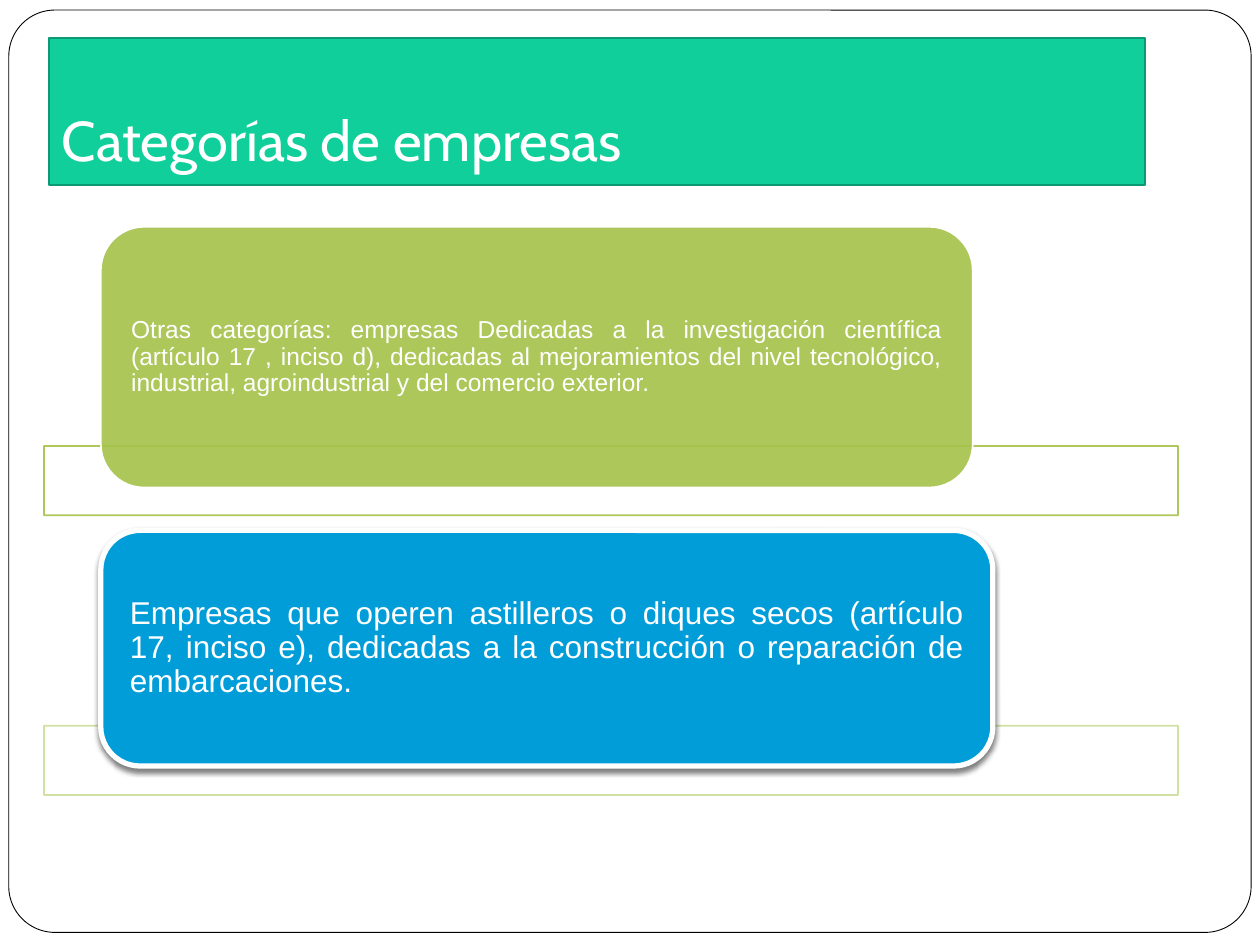
from lxml.etree import SubElement
from pptx import Presentation
from pptx.dml.color import RGBColor
from pptx.enum.shapes import MSO_SHAPE
from pptx.enum.text import MSO_ANCHOR, PP_ALIGN
from pptx.oxml.ns import qn
from pptx.util import Inches, Pt

WHITE = RGBColor(0xFF, 0xFF, 0xFF)
BLACK = RGBColor(0x00, 0x00, 0x00)
TEAL = RGBColor(0x10, 0xCF, 0x9B)
DARK_TEAL = RGBColor(0x0C, 0x99, 0x73)
GREEN = RGBColor(0xA5, 0xC2, 0x49)
BLUE = RGBColor(0x00, 0x9D, 0xD9)

RESEARCH = (
    "Otras categorías: empresas Dedicadas a la investigación científica "
    "(artículo 17 , inciso d), dedicadas al mejoramientos del nivel tecnológico, "
    "industrial, agroindustrial y del comercio exterior."
)
SHIPYARDS = (
    "Empresas que operen astilleros o diques secos (artículo 17, inciso e), "
    "dedicadas a la construcción o reparación de embarcaciones."
)


def set_alpha(color_format, percent):
    """Give a solid colour the stated opacity."""
    color = color_format._xFill.find(qn("a:srgbClr"))
    SubElement(color, qn("a:alpha"), val=str(percent * 1000))


def add_panel(slide, kind, box, fill, line, width, fill_alpha=100, line_alpha=100):
    """Add a filled and outlined preset shape."""
    panel = slide.shapes.add_shape(kind, *map(Inches, box))
    panel.shadow.inherit = False
    panel.fill.solid()
    panel.fill.fore_color.rgb = fill
    panel.line.color.rgb = line
    panel.line.width = Pt(width)
    if fill_alpha < 100:
        set_alpha(panel.fill.fore_color, fill_alpha)
    if line_alpha < 100:
        set_alpha(panel.line.color, line_alpha)
    return panel


def write_text(panel, text, size, font="Arial", align=PP_ALIGN.JUSTIFY,
               anchor=MSO_ANCHOR.MIDDLE, insets=(0.14, 0, 0.14, 0), spacing=0.9):
    """Write one formatted white paragraph inside a panel."""
    frame = panel.text_frame
    frame.word_wrap = True
    frame.vertical_anchor = anchor
    (frame.margin_left, frame.margin_top,
     frame.margin_right, frame.margin_bottom) = map(Inches, insets)
    paragraph = frame.paragraphs[0]
    paragraph.alignment = align
    paragraph.line_spacing = spacing
    run = paragraph.add_run()
    run.text = text
    run.font.name = font
    run.font.size = Pt(size)
    run.font.color.rgb = WHITE


def add_drop_shadow(panel):
    """Cast a soft black shadow straight down from a panel."""
    effects = panel._element.spPr.find(qn("a:effectLst"))
    shadow = SubElement(effects, qn("a:outerShdw"), blurRad=str(Pt(3)),
                        dist=str(Pt(2)), dir="5400000", rotWithShape="0")
    color = SubElement(shadow, qn("a:srgbClr"), val="000000")
    SubElement(color, qn("a:alpha"), val="50000")


def add_category(slide, text, size, bar_top, bar_alpha, box, fill, outline, fill_alpha=100):
    """Add a category card over its outlined bar."""
    add_panel(slide, MSO_SHAPE.RECTANGLE, (0.35, bar_top, 9, 0.55), WHITE, GREEN, 1,
              fill_alpha=90, line_alpha=bar_alpha)
    card = add_panel(slide, MSO_SHAPE.ROUNDED_RECTANGLE, box, fill, WHITE, outline,
                     fill_alpha=fill_alpha)
    write_text(card, text, size)
    return card


def main():
    """Build the slide and save it."""
    presentation = Presentation()
    presentation.slide_width, presentation.slide_height = Inches(10), Inches(7.5)
    slide = presentation.slides.add_slide(presentation.slide_layouts[6])

    border = add_panel(slide, MSO_SHAPE.ROUNDED_RECTANGLE, (0.07, 0.08, 9.86, 7.32),
                       WHITE, BLACK, 0.5)
    border.adjustments[0] = 0.05
    title = add_panel(slide, MSO_SHAPE.RECTANGLE, (0.39, 0.3, 8.7, 1.17), TEAL, DARK_TEAL, 1)
    write_text(title, "Categorías de empresas", 32, font="Cabin", align=PP_ALIGN.LEFT,
               anchor=MSO_ANCHOR.BOTTOM, insets=(0.1, 0.05, 0.1, 0.1), spacing=1.0)

    add_category(slide, RESEARCH, 14, 3.54, 90, (0.8, 1.8, 6.92, 2.07), GREEN, 1,
                 fill_alpha=90)
    shipyards = add_category(slide, SHIPYARDS, 18, 5.76, 50, (0.8, 4.21, 7.08, 1.87), BLUE, 3)
    add_drop_shadow(shipyards)

    presentation.save("out.pptx")


if __name__ == "__main__":
    main()
